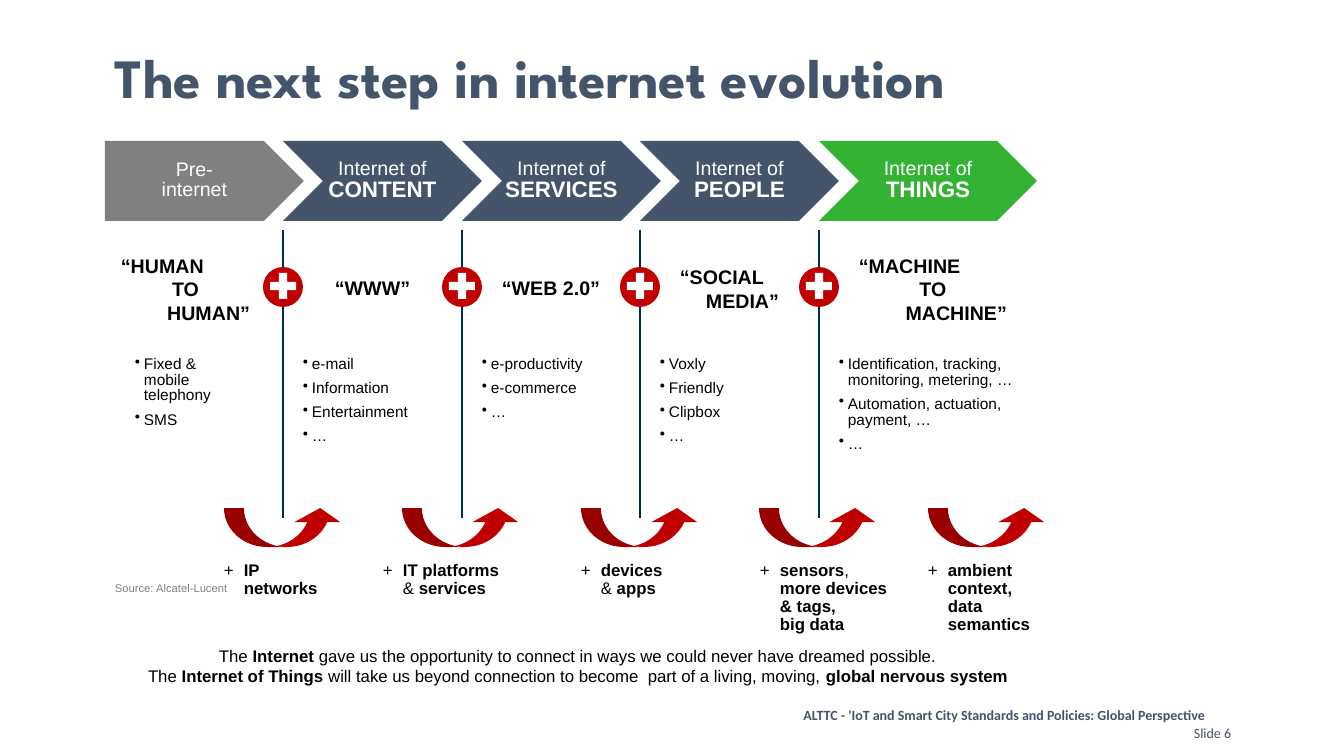
from lxml import etree
from pptx import Presentation
from pptx import util as u
from pptx.dml.color import RGBColor
from pptx.enum import shapes, text
from pptx.oxml.ns import qn

EMU_PER_PX = 914400 / 100.8

SLATE = RGBColor(0x44, 0x54, 0x6A)
GREY = RGBColor(0x80, 0x80, 0x80)
GREEN = RGBColor(0x34, 0xB2, 0x33)
NAVY = RGBColor(0x00, 0x2A, 0x50)
RED = RGBColor(0xC0, 0x00, 0x00)
BLACK = RGBColor(0x00, 0x00, 0x00)
WHITE = RGBColor(0xFF, 0xFF, 0xFF)

LEFT, CENTER, RIGHT = text.PP_ALIGN.LEFT, text.PP_ALIGN.CENTER, text.PP_ALIGN.RIGHT
TOP, MIDDLE = text.MSO_ANCHOR.TOP, text.MSO_ANCHOR.MIDDLE
SHAPE = shapes.MSO_SHAPE

EDGES = (283, 462, 640, 819)  # boundaries between the five stages

# label, left, width, fill
STAGES = [
    ("Internet of\n**CONTENT**", EDGES[0], 199, SLATE),
    ("Internet of\n**SERVICES**", EDGES[1], 199, SLATE),
    ("Internet of\n**PEOPLE**", EDGES[2], 199, SLATE),
    ("Internet of\n**THINGS**", EDGES[3], 218, GREEN),
]

# box, lines with their alignment
SLOGANS = [
    ((111, 248, 149, 82), [("“HUMAN", LEFT), ("TO", CENTER), ("HUMAN”", RIGHT)]),
    ((303, 271, 139, 34), [("“WWW”", CENTER)]),
    ((462, 271, 178, 34), [("“WEB 2.0”", CENTER)]),
    ((670, 260, 119, 57), [("“SOCIAL", LEFT), ("MEDIA”", RIGHT)]),
    ((849, 248, 168, 82), [("“MACHINE", LEFT), ("TO", CENTER), ("MACHINE”", RIGHT)]),
]

# left, width, bullets
EXAMPLES = [
    (125, 138, ["Fixed &\nmobile\ntelephony", "SMS"]),
    (293, 158, ["e-mail", "Information", "Entertainment", "…"]),
    (472, 158, ["e-productivity", "e-commerce", "…"]),
    (650, 158, ["Voxly", "Friendly", "Clipbox", "…"]),
    (829, 246, ["Identification, tracking, monitoring, metering, …",
                "Automation, actuation, payment, …", "…"]),
]

# arrow left, text left, text width, text
ENABLERS = [
    (224, 214, 115, ["+\t**IP\nnetworks**"]),
    (402, 373, 138, ["+\t**IT platforms**\n& **services**"]),
    (581, 571, 107, ["+\t**devices**\n& **apps**"]),
    (759, 750, 148, ["+\t**sensors**,", "**\tmore devices\n& tags,\nbig data**"]),
    (928, 918, 123, ["+\t**ambient**", "**\tcontext,**", "**\tdata\nsemantics**"]),
]

CLOSING = [
    "The **Internet** gave us the opportunity to connect in ways "
    "we could never have dreamed possible.",
    "The **Internet of Things** will take us beyond connection to become  "
    "part of a living, moving, **global nervous system**",
]


def px(n):
    return u.Emu(round(n * EMU_PER_PX))


def px_box(box):
    return [px(n) for n in box]


def write_runs(p, marked, size, color, font="Arial", bold=False, bold_size=None):
    """Fill a paragraph; **...** marks bold text and \\n a line break."""
    for i, part in enumerate(marked.split("**")):
        strong = bold or i % 2 == 1
        points = bold_size if strong and bold_size else size
        for j, line in enumerate(part.split("\n")):
            if j:
                p.add_line_break()
                etree.SubElement(p._p[-1], qn("a:rPr"), sz=str(round(size * 100)))
            if line:
                r = p.add_run()
                r.text = line
                r.font.name = font
                r.font.size = u.Pt(points)
                r.font.bold = strong
                r.font.color.rgb = color


def write_paragraphs(tf, lines, size, color, align=LEFT, spacing=None, after=None,
                     hang=0, bullet=None, **style):
    for i, line in enumerate(lines):
        marked, line_align = line if isinstance(line, tuple) else (line, align)
        p = tf.paragraphs[0] if i == 0 else tf.add_paragraph()
        p.alignment = line_align
        if spacing:
            p.line_spacing = spacing
        if after:
            p.space_after = u.Pt(after)
        pPr = p._p.get_or_add_pPr()
        if hang:
            pPr.set("marL", str(px(hang)))
            pPr.set("indent", str(-px(hang)))
        if bullet:
            etree.SubElement(pPr, qn("a:buChar"), char=bullet)
        write_runs(p, marked, size, color, **style)


def add_text(s, box, lines, size, color=BLACK, anchor=TOP, wrap=True, **style):
    tf = s.shapes.add_textbox(*px_box(box)).text_frame
    tf.word_wrap = wrap
    tf.vertical_anchor = anchor
    write_paragraphs(tf, lines, size, color, **style)


def add_plain_shape(parent, kind, box, fill, adjustments=()):
    sp = parent.shapes.add_shape(kind, *px_box(box))
    sp.shadow.inherit = False
    sp.fill.solid()
    sp.fill.fore_color.rgb = fill
    sp.line.fill.background()
    for i, value in enumerate(adjustments):
        sp.adjustments[i] = value
    return sp


def add_stage(s, kind, label, left, width, fill, side_inset):
    sp = add_plain_shape(s, kind, (left, 141, width, 80), fill)
    tf = sp.text_frame
    tf.word_wrap = True
    tf.vertical_anchor = MIDDLE
    tf.margin_left = tf.margin_right = px(side_inset)
    write_paragraphs(tf, [label], 14, WHITE, align=CENTER, spacing=0.85, bold_size=16)


def add_separator(group, x):
    line = group.shapes.add_connector(shapes.MSO_CONNECTOR.STRAIGHT,
                                      *px_box((x, 230, x, 518)))
    line.line.color.rgb = NAVY
    line.line.width = u.Pt(1.5)
    etree.SubElement(line._element.spPr, qn("a:effectLst"))


def add_plus_badge(s, center):
    group = s.shapes.add_group_shape()
    add_plain_shape(group, SHAPE.OVAL, (center - 20, 267, 40, 40), RED)
    add_plain_shape(group, SHAPE.CROSS, (center - 13, 273, 26, 26), WHITE, [0.34])


def main():
    prs = Presentation()
    prs.slide_width, prs.slide_height = px(1344), px(756)
    s = prs.slides.add_slide(prs.slide_layouts[6])

    add_text(s, (790, 702, 428, 27),
             ["ALTTC - 'IoT and Smart City Standards and Policies: Global Perspective"],
             10, SLATE, align=CENTER, font="Calibri", bold=True)
    add_text(s, (1184, 720, 67, 27), ["Slide 6"], 10, SLATE, wrap=False, font="Calibri")
    add_text(s, (105, 36, 1001, 90), ["The next step in internet evolution"], 39.6, SLATE,
             anchor=MIDDLE, spacing=0.9, font="League Spartan", bold=True)
    add_text(s, (105, 576, 135, 24), ["Source: Alcatel-Lucent"], 8, GREY, anchor=MIDDLE)

    add_stage(s, SHAPE.PENTAGON, "Pre-\ninternet", 105, 199, GREY, 10)
    for label, left, width, fill in STAGES:
        add_stage(s, SHAPE.CHEVRON, label, left, width, fill, 0)

    separators = s.shapes.add_group_shape()
    for x in EDGES:
        add_separator(separators, x)

    for box, lines in SLOGANS:
        add_text(s, box, lines, 14, anchor=MIDDLE, bold=True)
    for left, width, bullets in EXAMPLES:
        add_text(s, (left, 352, width, 100), bullets, 11, spacing=0.85, after=6,
                 hang=9, bullet="•")
    for x in EDGES:
        add_plus_badge(s, x)

    for arrow_left, left, width, lines in ENABLERS:
        add_plain_shape(s, SHAPE.CURVED_UP_ARROW, (arrow_left, 508, 119, 39), RED,
                        [0.51, 1.17, 0.36])
        add_text(s, (left, 557, width, 84), lines, 12, spacing=0.9, hang=20)

    add_text(s, (116, 641, 924, 50), CLOSING, 12, align=CENTER)
    prs.save("out.pptx")


if __name__ == "__main__":
    main()
